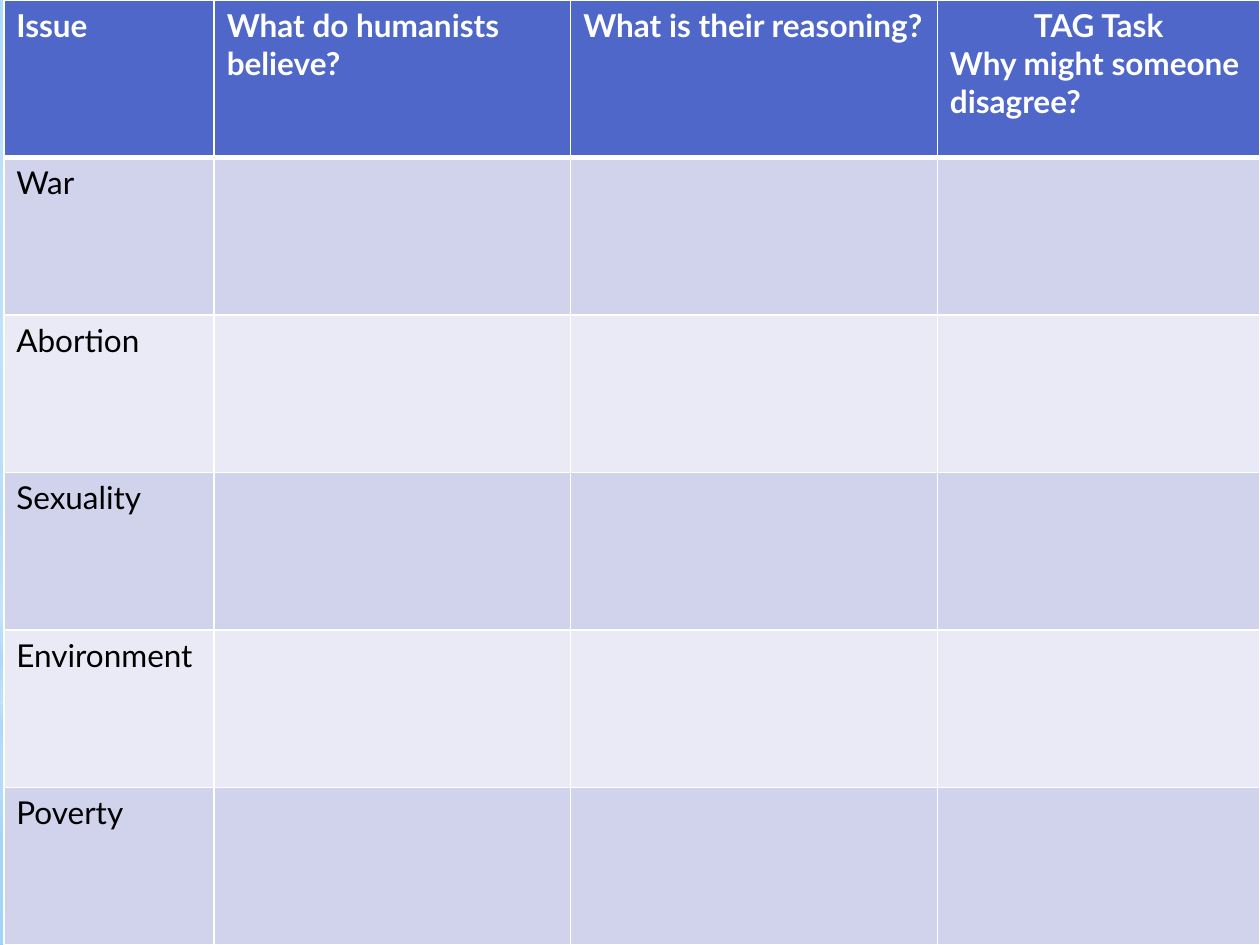
"""Build a slide with a table of humanist views on five issues."""
from pptx import Presentation
from pptx.dml.color import RGBColor
from pptx.enum.shapes import MSO_SHAPE
from pptx.enum.text import PP_ALIGN
from pptx.oxml.ns import qn
from pptx.util import Inches, Pt
from lxml import etree

CENTER, LEFT = PP_ALIGN.CENTER, PP_ALIGN.LEFT
RECT, OVAL = MSO_SHAPE.RECTANGLE, MSO_SHAPE.OVAL

WHITE = RGBColor(0xFF, 0xFF, 0xFF)
BLACK = RGBColor(0, 0, 0)
BLUE = RGBColor(0x4E, 0x67, 0xC8)
PALE = RGBColor(0xB4, 0xDC, 0xFA)
SKY = RGBColor(0x9E, 0xD5, 0xFF)
DEEP = RGBColor(0x5B, 0xB9, 0xFF)
BANDS = [RGBColor(0xD0, 0xD3, 0xEB), RGBColor(0xE9, 0xEA, 0xF5)]

HEADS = [
    ["Issue"],
    ["What do humanists believe?"],
    ["What is their reasoning?"],
    ["TAG Task", "Why might someone disagree?"],
]
ISSUES = ["War", "Abortion", "Sexuality", "Environment", "Poverty"]
COLS = [1.67, 2.83, 2.91, 2.56]
WIDE, HIGH = 10, 7.5
FONT, SIZE = "Lato", 18
THIN, THICK = 1, 3

MID = (50, 50, 50, 50)
BACK = [(0, SKY, 100), (60, WHITE, 100), (100, DEEP, 100)]
FOCUS = (20, 10, 20, 60)
GLOWS = [
    (RECT, 5.58, 1.92, MID, [(0, WHITE, 91), (37, WHITE, 76), (100, PALE, 79)]),
    (RECT, 0, 5.58, MID, [(0, WHITE, 89), (48, WHITE, 62), (100, PALE, 79)]),
    (RECT, 4.12, 2.5, None, [(0, WHITE, 0), (29, WHITE, 30), (45, PALE, 40),
                             (55, WHITE, 26), (65, PALE, 60), (100, WHITE, 0)]),
    (OVAL, 1.75, 5.58, MID, [(0, WHITE, 100), (56, WHITE, 0)]),
]


def add_node(root, tag, **attrs):
    return etree.SubElement(root, qn(f"a:{tag}"), {k: str(v) for k, v in attrs.items()})


def paint(fill, root, stops, focus):
    fill.gradient()
    grad = next(root.iter(qn("a:gradFill")))
    grad.clear()
    group = add_node(grad, "gsLst")
    for spot, color, alpha in stops:
        tint = add_node(add_node(group, "gs", pos=spot * 1000), "srgbClr", val=color)
        add_node(tint, "alpha", val=alpha * 1000)
    if focus:
        ring = add_node(grad, "path", path="circle")
        add_node(ring, "fillToRect", **{k: v * 1000 for k, v in zip("ltrb", focus)})
    else:
        add_node(grad, "lin", ang=90 * 60000, scaled=0)


def add_glows(slide):
    paint(slide.background.fill, slide._element, BACK, FOCUS)
    for kind, top, high, focus, stops in GLOWS:
        glow = slide.shapes.add_shape(kind, 0, Inches(top), Inches(WIDE), Inches(high))
        glow.shadow.inherit = False
        glow.line.fill.background()
        paint(glow.fill, glow._element, stops, focus)


def add_edge(cell, side, width):
    line = add_node(cell._tc.get_or_add_tcPr(), f"ln{side}", w=Pt(width))
    add_node(add_node(line, "solidFill"), "srgbClr", val=WHITE)


def add_text(cell, lines, color, bold):
    frame = cell.text_frame
    for i, line in enumerate(lines):
        para = frame.add_paragraph() if i else frame.paragraphs[0]
        para.alignment = CENTER if i < len(lines) - 1 else LEFT
        run = para.add_run()
        run.text = line
        run.font.name, run.font.size = FONT, Pt(SIZE)
        run.font.bold = bold
        run.font.color.rgb = color


def add_grid(slide):
    rows = [HEADS] + [[[name]] + [[]] * (len(COLS) - 1) for name in ISSUES]
    width = sum(COLS)
    table = slide.shapes.add_table(
        len(rows), len(COLS), Inches(WIDE - width), 0, Inches(width), Inches(HIGH)
    ).table
    for col, size in zip(table.columns, COLS):
        col.width = Inches(size)
    for r, row in enumerate(rows):
        table.rows[r].height = Inches(HIGH / len(rows))
        head = r == 0
        edges = {"L": THIN, "R": THIN, "T": THICK if r == 1 else THIN, "B": THICK if head else THIN}
        for c, lines in enumerate(row):
            cell = table.cell(r, c)
            for side, size in edges.items():
                add_edge(cell, side, size)
            cell.fill.solid()
            cell.fill.fore_color.rgb = BLUE if head else BANDS[(r - 1) % 2]
            add_text(cell, lines, WHITE if head else BLACK, head)


def main():
    deck = Presentation()
    deck.slide_width, deck.slide_height = Inches(WIDE), Inches(HIGH)
    slide = deck.slides.add_slide(deck.slide_layouts[6])
    add_glows(slide)
    add_grid(slide)
    deck.save("out.pptx")


if __name__ == "__main__":
    main()
